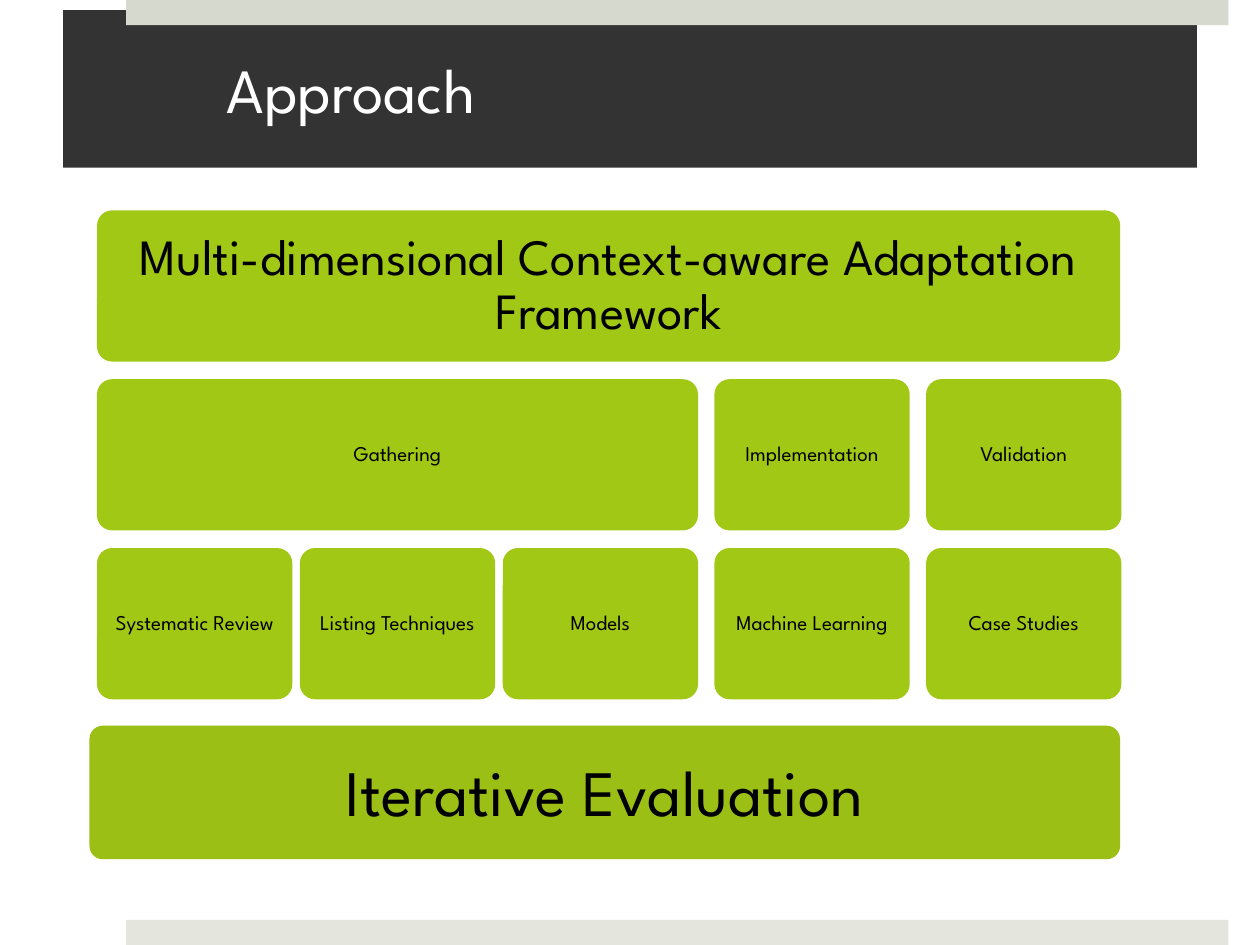
from pptx import Presentation
from pptx.dml.color import RGBColor
from pptx.enum.shapes import MSO_SHAPE as Shape
from pptx.enum.text import MSO_ANCHOR as Anchor, PP_ALIGN as Align
from pptx.util import Inches, Pt

BLACK = RGBColor(0x00, 0x00, 0x00)
WHITE = RGBColor(0xFF, 0xFF, 0xFF)
CHARCOAL = RGBColor(0x33, 0x33, 0x33)
TOP_STRIP = RGBColor(0xD6, 0xD9, 0xCD)
BOTTOM_STRIP = RGBColor(0xE4, 0xE6, 0xDE)
LIME = RGBColor(0xA2, 0xC8, 0x16)
DARK_LIME = RGBColor(0x9B, 0xBF, 0x15)


class SlideBuilder:
    font_name = "League Spartan"

    def __init__(self, slide):
        self.slide = slide

    def add_filled(self, kind, left, top, width, height, color):
        shape = self.slide.shapes.add_shape(
            kind, Inches(left), Inches(top), Inches(width), Inches(height))
        shape.shadow.inherit = False
        shape.fill.solid()
        shape.fill.fore_color.rgb = color
        shape.line.fill.background()
        return shape

    def set_text(self, shape, text, size, color, align, insets):
        frame = shape.text_frame
        frame.word_wrap = True
        frame.vertical_anchor = Anchor.MIDDLE
        (frame.margin_left, frame.margin_top,
         frame.margin_right, frame.margin_bottom) = map(Inches, insets)
        paragraph = frame.paragraphs[0]
        paragraph.text = text
        paragraph.alignment = align
        paragraph.font.name = self.font_name
        paragraph.font.size = Pt(size)
        paragraph.font.color.rgb = color
        return paragraph

    def add_strip(self, top, color):
        self.add_filled(Shape.RECTANGLE, 1, top, 8.75, 0.2, color)

    def add_title(self, text):
        title = self.slide.shapes.title
        title.left, title.top = Inches(0.5), Inches(0.08)
        title.width, title.height = Inches(9), Inches(1.25)
        title.fill.solid()
        title.fill.fore_color.rgb = CHARCOAL
        self.set_text(title, text, 36, WHITE, Align.LEFT, (1.3, 0.05, 0.3, 0.05))

    def add_box(self, text, left, top, width, height=1.2, size=12, inset=0.05, color=LIME):
        box = self.add_filled(Shape.ROUNDED_RECTANGLE, left, top, width, height, color)
        box.adjustments[0] = 0.1
        paragraph = self.set_text(box, text, size, BLACK, Align.CENTER, [inset] * 4)
        paragraph.line_spacing = 0.9
        return box


def main():
    presentation = Presentation()
    presentation.slide_width, presentation.slide_height = Inches(10), Inches(7.5)
    builder = SlideBuilder(presentation.slides.add_slide(presentation.slide_layouts[5]))

    # Strips and title
    builder.add_strip(0, TOP_STRIP)
    builder.add_strip(7.3, BOTTOM_STRIP)
    builder.add_title("Approach")

    # Framework over its phases, each phase over its activities
    left, phase_top, activity_top = 0.77, 3.01, 4.35
    activity_width, activity_gap, phase_gap = 1.55, 0.06, 0.13
    phases = [
        ("Gathering", ["Systematic Review", "Listing Techniques", "Models"]),
        ("Implementation", ["Machine Learning"]),
        ("Validation", ["Case Studies"]),
    ]
    builder.add_box("Multi-dimensional Context-aware Adaptation Framework",
                    left, 1.67, 8.12, size=29, inset=0.12)
    for phase, activities in phases:
        count = len(activities)
        phase_width = count * activity_width + (count - 1) * activity_gap
        builder.add_box(phase, left, phase_top, phase_width)
        for index, activity in enumerate(activities):
            builder.add_box(activity, left + index * (activity_width + activity_gap),
                            activity_top, activity_width)
        left += phase_width + phase_gap

    # Evaluation bar, with its text slightly below the middle
    evaluation = builder.add_box("Iterative Evaluation", 0.71, 5.76, 8.18, height=1.06,
                                 size=37, inset=0.15, color=DARK_LIME)
    evaluation.text_frame.margin_top = Inches(0.2)

    presentation.save("out.pptx")


if __name__ == "__main__":
    main()
